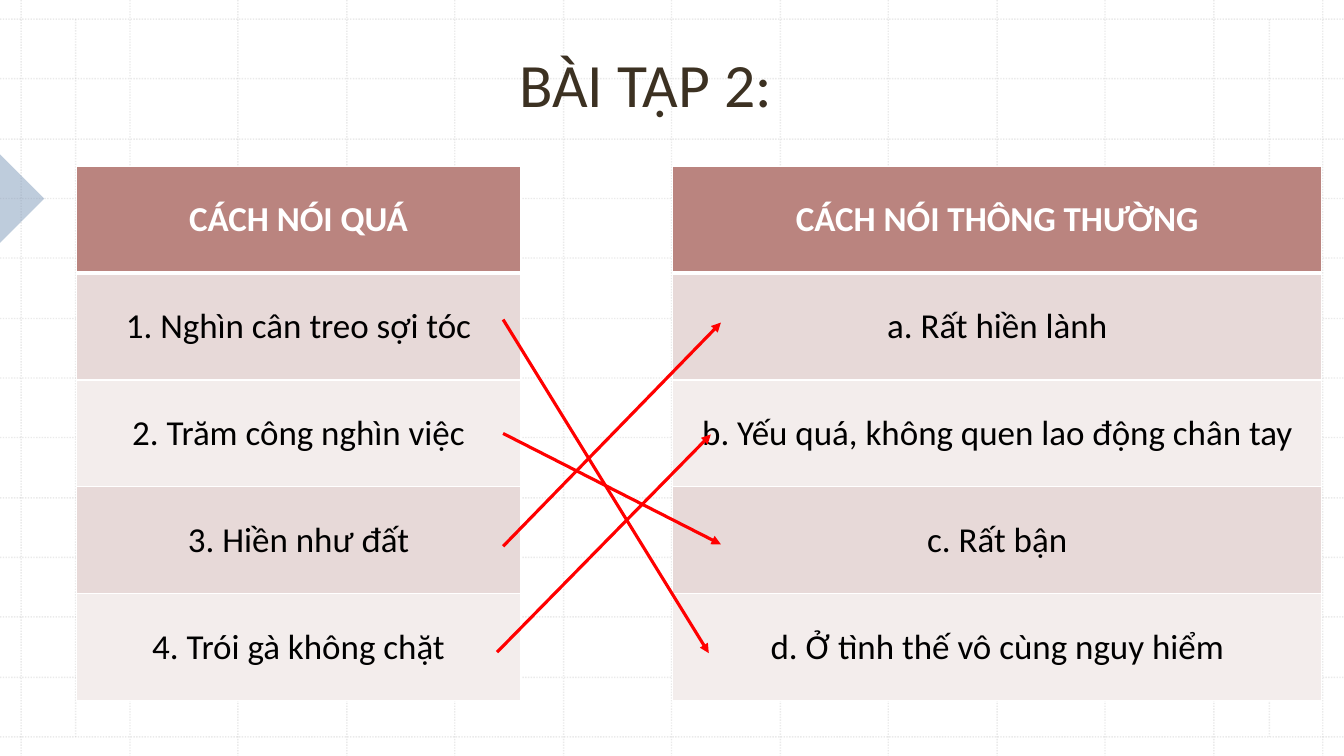
from dataclasses import dataclass

from lxml import etree
from pptx import Presentation
from pptx.dml.color import RGBColor
from pptx.enum.dml import MSO_LINE
from pptx.enum.shapes import MSO_CONNECTOR, MSO_SHAPE
from pptx.enum.text import MSO_ANCHOR, PP_ALIGN
from pptx.oxml.ns import qn
from pptx.util import Emu, Pt

PX = 9144  # 100 px to the inch
WIDE, HIGH = 1333, 750
DOT = MSO_LINE.ROUND_DOT
STRAIGHT = MSO_CONNECTOR.STRAIGHT
WEDGE = MSO_SHAPE.RIGHT_TRIANGLE
CENTER = PP_ALIGN.CENTER
MIDDLE, BOTTOM = MSO_ANCHOR.MIDDLE, MSO_ANCHOR.BOTTOM

GRID, RED, WHITE, BLACK = "BCBCBC", "FF0000", "FFFFFF", "000000"
HEAD, BANDS = "BA847F", ("E7D9D8", "F3EDEC")
TOP, ROW = 165, 106


@dataclass
class Column:
    left: int
    width: int
    rows: tuple[str, ...]


@dataclass
class Line:
    x1: int
    y1: int
    x2: int
    y2: int


COLUMNS = (
    Column(76, 440, (
        "CÁCH NÓI QUÁ", "1. Nghìn cân treo sợi tóc", "2. Trăm công nghìn việc",
        "3. Hiền như đất", "4. Trói gà không chặt")),
    Column(667, 644, (
        "CÁCH NÓI THÔNG THƯỜNG", "a. Rất hiền lành",
        "b. Yếu quá, không quen lao động chân tay", "c. Rất bận",
        "d. Ở tình thế vô cùng nguy hiểm")),
)
ARROWS = (
    Line(499, 317, 703, 648), Line(499, 430, 715, 540),
    Line(499, 542, 715, 320), Line(493, 647, 705, 431),
)


def px(*sizes: int) -> list[Emu]:
    return [Emu(size * PX) for size in sizes]


def color(code: str) -> RGBColor:
    return RGBColor.from_string(code)


def fade(fill, share: int) -> None:
    """Set the opacity of a solid fill, in percent."""
    tone = fill._xPr.find(qn("a:solidFill"))[0]
    etree.SubElement(tone, qn("a:alpha"), val=str(share * 1000))


def write(frame, text: str, size: int, code: str, bold: bool = False) -> None:
    par = frame.paragraphs[0]
    par.alignment = CENTER
    run = par.add_run()
    run.text = text
    look = {"name": "Calibri", "size": Pt(size), "bold": bold}
    for key, value in look.items():
        setattr(run.font, key, value)
    run.font.color.rgb = color(code)


def draw(slide, line: Line, code: str, width: float):
    item = slide.shapes.add_connector(
        STRAIGHT, *px(line.x1, line.y1, line.x2, line.y2))
    item.line.color.rgb = color(code)
    item.line.width = Pt(width)
    etree.SubElement(item._element.spPr, qn("a:effectLst"))
    return item.line


def add_grid(slide) -> None:
    lines = [Line(x, 0, x, HIGH) for x in (round(21 + 107.55 * i) for i in range(13))]
    lines += [Line(0, y, WIDE, y) for y in (round(19 + 59.33 * i) for i in range(13))]
    lines += [Line(x, 19, x, 731) for x in (75, 1259)]
    for line in lines:
        pen = draw(slide, line, GRID, 1)
        pen.dash_style = DOT
        fade(pen.fill, 30)


def add_wedge(slide) -> None:
    wedge = slide.shapes.add_shape(WEDGE, *px(-31, 166, 62, 62))
    wedge.rotation = 225
    wedge.shadow.inherit = False
    wedge.fill.solid()
    wedge.fill.fore_color.rgb = color("7F9ABA")
    fade(wedge.fill, 50)
    wedge.line.fill.background()


def add_title(slide, text: str) -> None:
    frame = slide.shapes.add_textbox(*px(76, 33, 1129, 91)).text_frame
    frame.word_wrap = True
    frame.vertical_anchor = BOTTOM
    write(frame, text, 44, "3C3122")


def edge(cell, side: str, width: int) -> None:
    line = etree.SubElement(
        cell._tc.get_or_add_tcPr(), qn(f"a:ln{side}"), w=str(Pt(width)))
    fill = etree.SubElement(line, qn("a:solidFill"))
    etree.SubElement(fill, qn("a:srgbClr"), val=WHITE)


def add_column(slide, column: Column) -> None:
    count = len(column.rows)
    table = slide.shapes.add_table(
        count, 1, *px(column.left, TOP, column.width, ROW * count)).table
    for i, text in enumerate(column.rows):
        cell = table.cell(i, 0)
        # Borders come before the fill in the cell's XML
        widths = {"L": 1, "R": 1, "T": 3 if i == 1 else 1, "B": 3 if i == 0 else 1}
        for side, width in widths.items():
            edge(cell, side, width)
        cell.fill.solid()
        cell.fill.fore_color.rgb = color(BANDS[(i - 1) % 2] if i else HEAD)
        cell.vertical_anchor = MIDDLE
        write(cell.text_frame, text, 25, BLACK if i else WHITE, i == 0)


def main() -> None:
    deck = Presentation()
    deck.slide_width, deck.slide_height = px(WIDE, HIGH)
    slide = deck.slides.add_slide(deck.slide_layouts[6])

    # Backdrop
    add_grid(slide)
    add_wedge(slide)

    # Title and the two lists to match
    add_title(slide, "BÀI TẬP 2:")
    for column in COLUMNS:
        add_column(slide, column)

    # Answers
    for arrow in ARROWS:
        pen = draw(slide, arrow, RED, 2.25)
        etree.SubElement(pen._get_or_add_ln(), qn("a:tailEnd"), type="triangle")

    deck.save("out.pptx")


if __name__ == "__main__":
    main()
